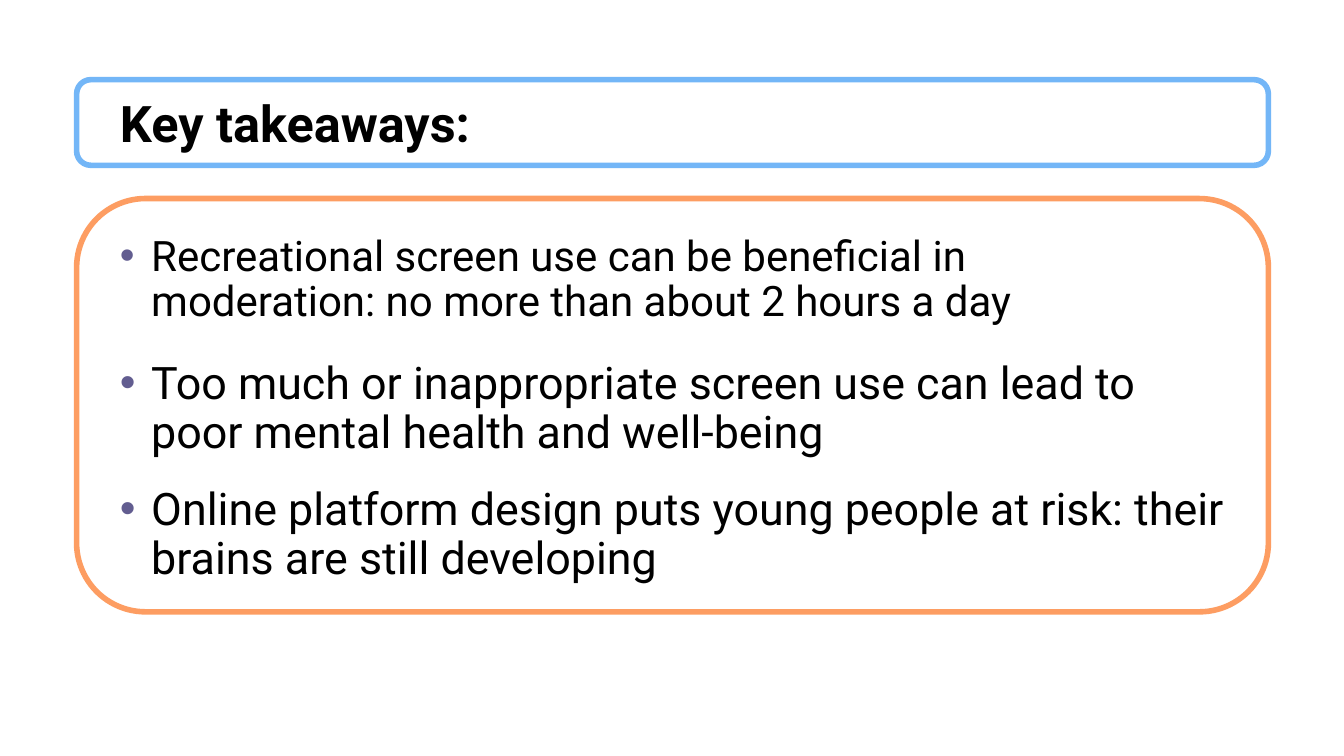
from dataclasses import dataclass

from lxml import etree
from pptx import Presentation
from pptx import util as u
from pptx.dml.color import RGBColor
from pptx.enum import shapes, text
from pptx.oxml import ns

# Content: wording, type size, right edge of each takeaway
TITLE = "Key takeaways:"
TAKEAWAYS = [
    ("Recreational screen use can be beneficial in moderation: "
     "no more than about 2 hours a day", 30, 11.79),
    ("Too much or inappropriate screen use can lead to "
     "poor mental health and well-being", 32, 12.27),
    ("Online platform design puts young people at risk: "
     "their brains are still developing", 32, 12.27),
]


@dataclass(frozen=True)
class Theme:
    font: str = "Roboto"
    ink: str = "000000"
    bullet: str = "625D90"
    title_frame: str = "73B6F7"
    list_frame: str = "FD9D62"
    title_size: int = 36
    frame_width: int = 4


THEME = Theme()

# Layout in inches
WIDTH, HEIGHT = 13.33, 7.5
FRAME_LEFT, FRAME_WIDTH = 0.76, 11.82
TEXT_LEFT = 1.09
LIST_TOP, LIST_PITCH, ITEM_HEIGHT = 2.28, 1.25, 1.06
INDENT = 0.31


def add_frame(slide, top, height, color):
    frame = slide.shapes.add_shape(
        shapes.MSO_SHAPE.ROUNDED_RECTANGLE, u.Inches(FRAME_LEFT), u.Inches(top),
        u.Inches(FRAME_WIDTH), u.Inches(height))
    frame.shadow.inherit = False
    frame.fill.background()
    frame.line.color.rgb = RGBColor.from_string(color)
    frame.line.width = u.Pt(THEME.frame_width)


def add_bullet(paragraph):
    properties = paragraph._p.get_or_add_pPr()
    properties.set("marL", str(u.Inches(INDENT)))
    properties.set("indent", str(-u.Inches(INDENT)))
    color = etree.SubElement(properties, ns.qn("a:buClr"))
    etree.SubElement(color, ns.qn("a:srgbClr"), val=THEME.bullet)
    etree.SubElement(properties, ns.qn("a:buFont"), typeface="Arial")
    etree.SubElement(properties, ns.qn("a:buChar"), char="•")


def write(shape, wording, box, *, size, bold=False, bullet=False, spacing=1.0,
          anchor=text.MSO_ANCHOR.TOP):
    shape.left, shape.top, shape.width, shape.height = map(u.Inches, box)
    frame = shape.text_frame
    frame.word_wrap = True
    frame.auto_size = text.MSO_AUTO_SIZE.NONE
    frame.vertical_anchor = anchor
    paragraph = frame.paragraphs[0]
    if bullet:
        add_bullet(paragraph)
    paragraph.alignment = text.PP_ALIGN.LEFT
    paragraph.line_spacing = spacing
    paragraph.space_before = u.Pt(0)
    run = paragraph.add_run()
    run.text = wording
    run.font.name = THEME.font
    run.font.size = u.Pt(size)
    run.font.bold = bold
    run.font.color.rgb = RGBColor.from_string(THEME.ink)


def main():
    presentation = Presentation()
    presentation.slide_width = u.Inches(WIDTH)
    presentation.slide_height = u.Inches(HEIGHT)
    # The comparison layout offers a title and several body placeholders
    slide = presentation.slides.add_slide(
        presentation.slide_layouts.get_by_name("Comparison"))
    title, *bodies = slide.placeholders

    # Title and frames
    write(title, TITLE, (TEXT_LEFT, 0.86, 10.84, 0.71), size=THEME.title_size,
          bold=True, anchor=text.MSO_ANCHOR.MIDDLE)
    add_frame(slide, 0.79, 0.85, THEME.title_frame)
    add_frame(slide, 1.97, 4.1, THEME.list_frame)

    # Takeaways, evenly spaced
    for row, (body, (wording, size, right)) in enumerate(zip(bodies, TAKEAWAYS)):
        box = (TEXT_LEFT, LIST_TOP + row * LIST_PITCH, right - TEXT_LEFT, ITEM_HEIGHT)
        write(body, wording, box, size=size, bullet=True, spacing=0.9)

    # Unused placeholders
    for body in bodies[len(TAKEAWAYS):]:
        body.element.getparent().remove(body.element)

    presentation.save("out.pptx")


if __name__ == "__main__":
    main()
